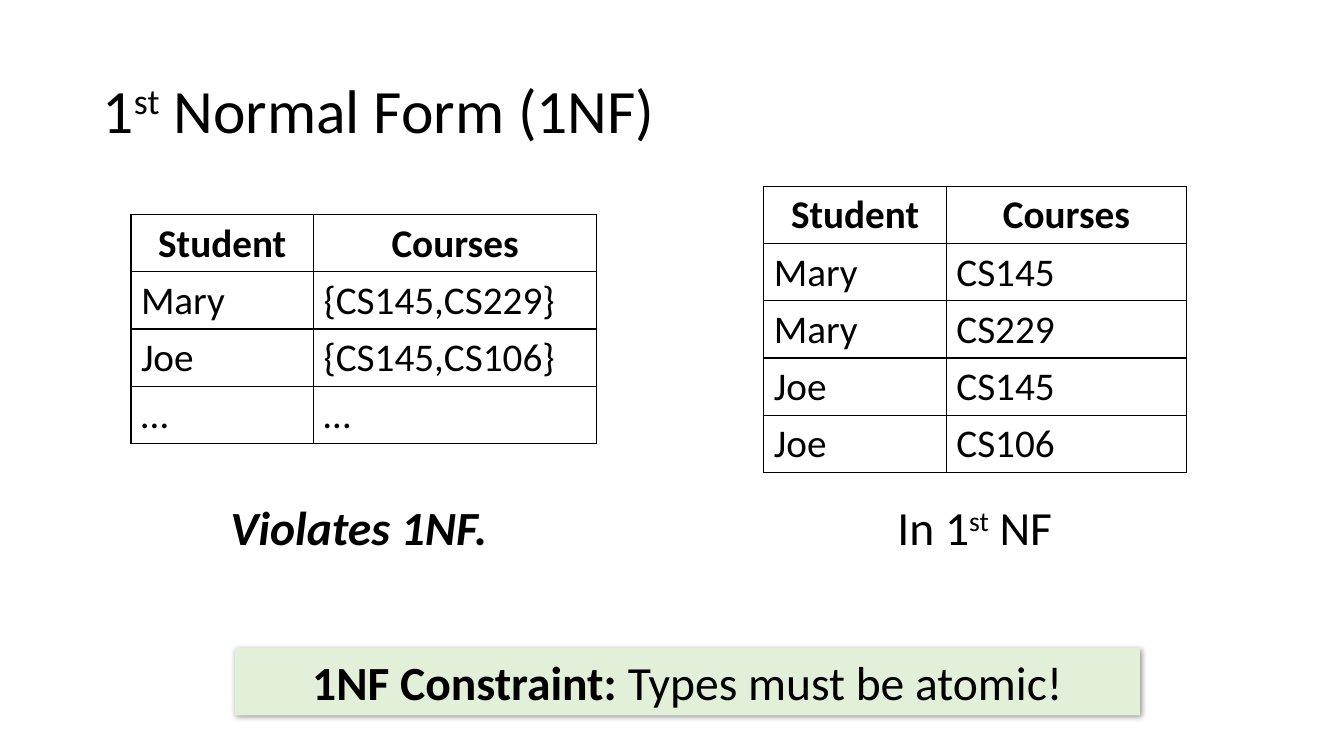
"""Build a slide that contrasts a table violating 1NF with one in 1NF."""
from dataclasses import dataclass

from lxml.etree import SubElement as Sub
from pptx import Presentation
from pptx.dml.color import RGBColor as RGB
from pptx.enum.shapes import MSO_SHAPE as Shape
from pptx.enum.text import MSO_ANCHOR as Anchor, PP_ALIGN as Align
from pptx.oxml.ns import qn
from pptx.util import Cm, Pt


@dataclass(frozen=True)
class Theme:
    font: str = "Calibri"
    ink: str = "000000"
    mint: str = "E2F0D9"
    title: int = 44
    note: int = 34
    cell: int = 28
    rule: int = 1


THEME = Theme()
ROW = 1.44
HEAD = ("Student", "Courses")
NESTED = [HEAD, ("Mary", "{CS145,CS229}"), ("Joe", "{CS145,CS106}"), ("…", "…")]
ATOMIC = [HEAD, ("Mary", "CS145"), ("Mary", "CS229"), ("Joe", "CS145"), ("Joe", "CS106")]


def style(run, size, marks=""):
    font = run.font
    font.name, font.size = THEME.font, Pt(size)
    font.color.rgb = RGB.from_string(THEME.ink)
    font.bold, font.italic = "b" in marks, "i" in marks
    if "^" in marks:
        run._r.get_or_add_rPr().set("baseline", "30000")


def write(shape, parts, size, align=Align.CENTER, anchor=Anchor.TOP):
    frame = shape.text_frame
    frame.word_wrap, frame.vertical_anchor = True, anchor
    para = frame.paragraphs[0]
    para.alignment = align
    for text, marks in parts:
        run = para.add_run()
        run.text = text
        style(run, size, marks)
    return para


def add_text(slide, box, parts, size, **place):
    shape = slide.shapes.add_textbox(*map(Cm, box))
    return write(shape, parts, size, **place)


def add_shade(shape):
    effect = Sub(shape._element.spPr, qn("a:effectLst"))
    shade = Sub(effect, qn("a:outerShdw"), blurRad=str(Pt(4)), dist=str(Pt(1)),
                dir="2700000", algn="tl", rotWithShape="0")
    color = Sub(shade, qn("a:srgbClr"), val=THEME.ink)
    Sub(color, qn("a:alpha"), val="40000")


def add_banner(slide, box, parts):
    shape = slide.shapes.add_shape(Shape.RECTANGLE, *map(Cm, box))
    shape.fill.solid()
    shape.fill.fore_color.rgb = RGB.from_string(THEME.mint)
    shape.line.fill.background()
    add_shade(shape)
    write(shape, parts, THEME.note, anchor=Anchor.MIDDLE)


def frame_cell(cell):
    props = cell._tc.get_or_add_tcPr()
    for side in ("lnL", "lnR", "lnT", "lnB"):
        line = Sub(props, qn(f"a:{side}"), w=str(Pt(THEME.rule)))
        Sub(Sub(line, qn("a:solidFill")), qn("a:srgbClr"), val=THEME.ink)
    cell.fill.background()


def add_grid(slide, left, top, widths, rows):
    size = (left, top, sum(widths), ROW * len(rows))
    table = slide.shapes.add_table(len(rows), len(widths), *map(Cm, size)).table
    table.first_row = table.horz_banding = False
    for col, width in zip(table.columns, widths):
        col.width = Cm(width)
    for r, row in enumerate(rows):
        for c, text in enumerate(row):
            cell = table.cell(r, c)
            frame_cell(cell)
            para = cell.text_frame.paragraphs[0]
            para.text = text
            para.alignment = Align.LEFT if r else Align.CENTER
            style(para.runs[0], THEME.cell, "" if r else "b")


def main():
    deck = Presentation()
    deck.slide_width, deck.slide_height = Cm(33.87), Cm(19.05)
    slide = deck.slides.add_slide(deck.slide_layouts[6])
    title = add_text(slide, (2.34, 1.02, 29.21, 3.68),
                     [("1", ""), ("st", "^"), (" Normal Form (1NF)", "")],
                     THEME.title, align=Align.LEFT, anchor=Anchor.MIDDLE)
    title.line_spacing = 0.9
    add_grid(slide, 3.3, 5.41, (4.6, 7.14), NESTED)
    add_text(slide, (4.8, 12.42, 8.76, 1.7), [("Violates 1NF. ", "bi")], THEME.note)
    add_banner(slide, (5.92, 16.33, 22.81, 1.7),
               [("1NF Constraint: ", "b"), ("Types must be atomic!", "")])
    add_grid(slide, 19.25, 4.7, (4.6, 6.05), ATOMIC)
    add_text(slide, (22.05, 12.42, 5.03, 1.7),
             [("In 1", ""), ("st", "^"), (" NF", "")], THEME.note)
    deck.save("out.pptx")


if __name__ == "__main__":
    main()
